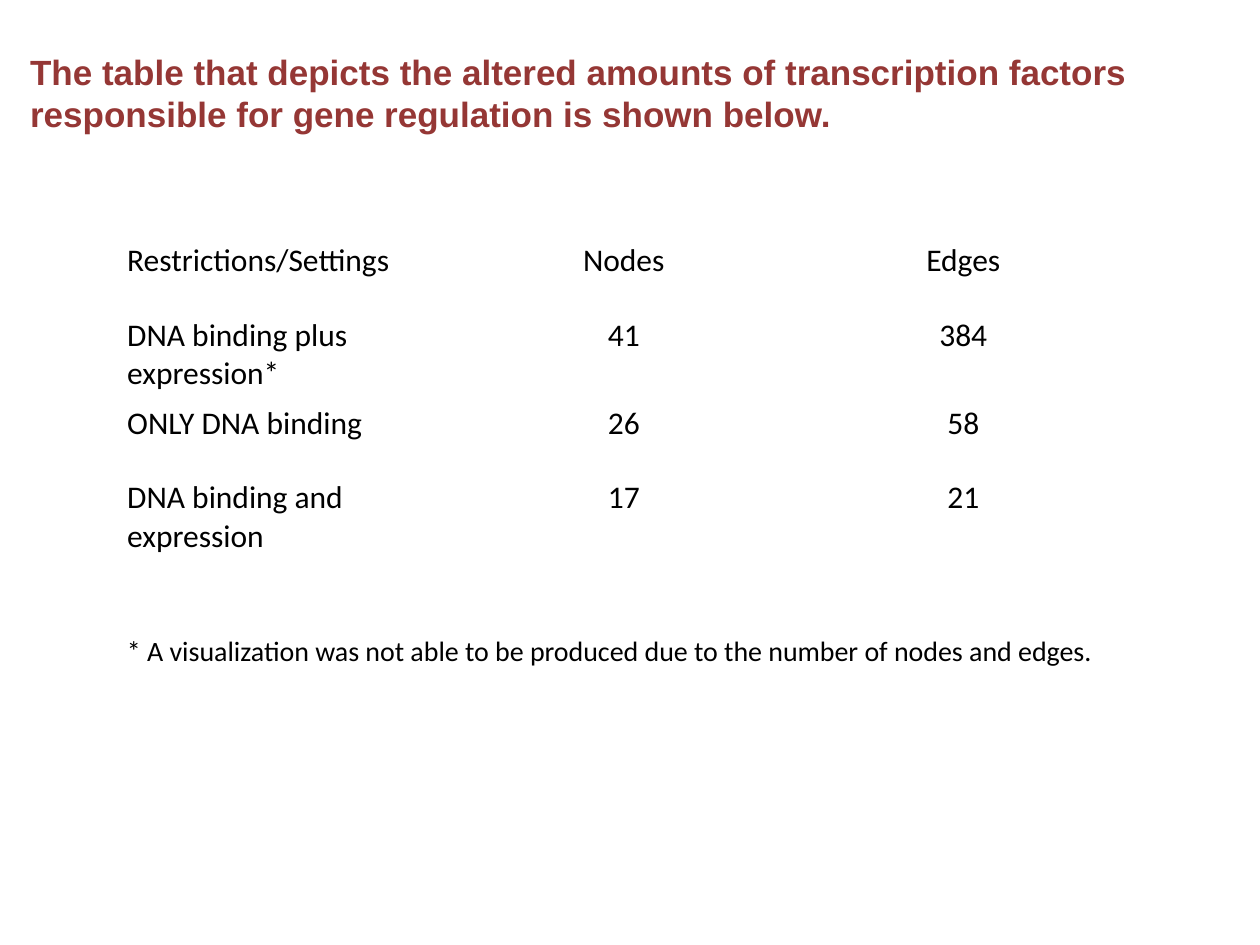
from pptx import Presentation
from pptx import util as u
from pptx.dml.color import RGBColor
from pptx.enum import text

COLORS = {"title": "953735", "body": "000000"}
ROWS = [
    ("Restrictions/Settings", "Nodes", "Edges"),
    ("DNA binding plus expression*", "41", "384"),
    ("ONLY DNA binding", "26", "58"),
    ("DNA binding and expression", "17", "21"),
]
LEFT, WIDTH = 65.5, 582
ROW_HEIGHT = 42.5


def write(frame, words, size=18, font="Calibri", color="body", bold=False,
          align=text.PP_ALIGN.LEFT):
    """Put one formatted paragraph into a text frame."""
    frame.word_wrap = True
    paragraph = frame.paragraphs[0]
    paragraph.alignment = align
    run = paragraph.add_run()
    run.text = words
    run.font.size = u.Pt(size)
    run.font.name = font
    run.font.bold = bold
    run.font.color.rgb = RGBColor.from_string(COLORS[color])


def place(shape, left, top, width, height):
    shape.left, shape.top = u.Pt(left), u.Pt(top)
    shape.width, shape.height = u.Pt(width), u.Pt(height)


def add_heading(slide, words):
    heading = slide.shapes.title
    place(heading, 10, 25, 710, 56)
    frame = heading.text_frame
    frame.vertical_anchor = text.MSO_ANCHOR.TOP
    frame.auto_size = text.MSO_AUTO_SIZE.SHAPE_TO_FIT_TEXT
    write(frame, words, size=20, font="Arial", color="title", bold=True)


def add_network_table(slide, rows, top):
    network = slide.shapes.add_table(
        len(rows), len(rows[0]), u.Pt(LEFT), u.Pt(top),
        u.Pt(WIDTH), u.Pt(ROW_HEIGHT * len(rows))).table
    network.first_row = network.horz_banding = False
    for r, row in enumerate(rows):
        for c, words in enumerate(row):
            cell = network.cell(r, c)
            cell.fill.background()
            align = text.PP_ALIGN.CENTER if c else text.PP_ALIGN.LEFT
            write(cell.text_frame, words, align=align)


def add_footnote(slide, words, top):
    footnote = slide.shapes.add_textbox(
        u.Pt(LEFT), u.Pt(top), u.Pt(WIDTH), u.Pt(26.5))
    footnote.text_frame.auto_size = text.MSO_AUTO_SIZE.SHAPE_TO_FIT_TEXT
    write(footnote.text_frame, words, size=16)


def main():
    deck = Presentation()
    deck.slide_width, deck.slide_height = u.Pt(720), u.Pt(540)
    slide = deck.slides.add_slide(deck.slide_layouts[5])  # title only

    # Heading
    add_heading(slide, "The table that depicts the altered amounts of transcription "
                       "factors responsible for gene regulation is shown below.")
    # Nodes and edges for each setting
    add_network_table(slide, ROWS, top=134.5)
    # Note to the starred row
    add_footnote(slide, "* A visualization was not able to be produced due to "
                        "the number of nodes and edges.", top=358.5)

    deck.save("out.pptx")


if __name__ == "__main__":
    main()
